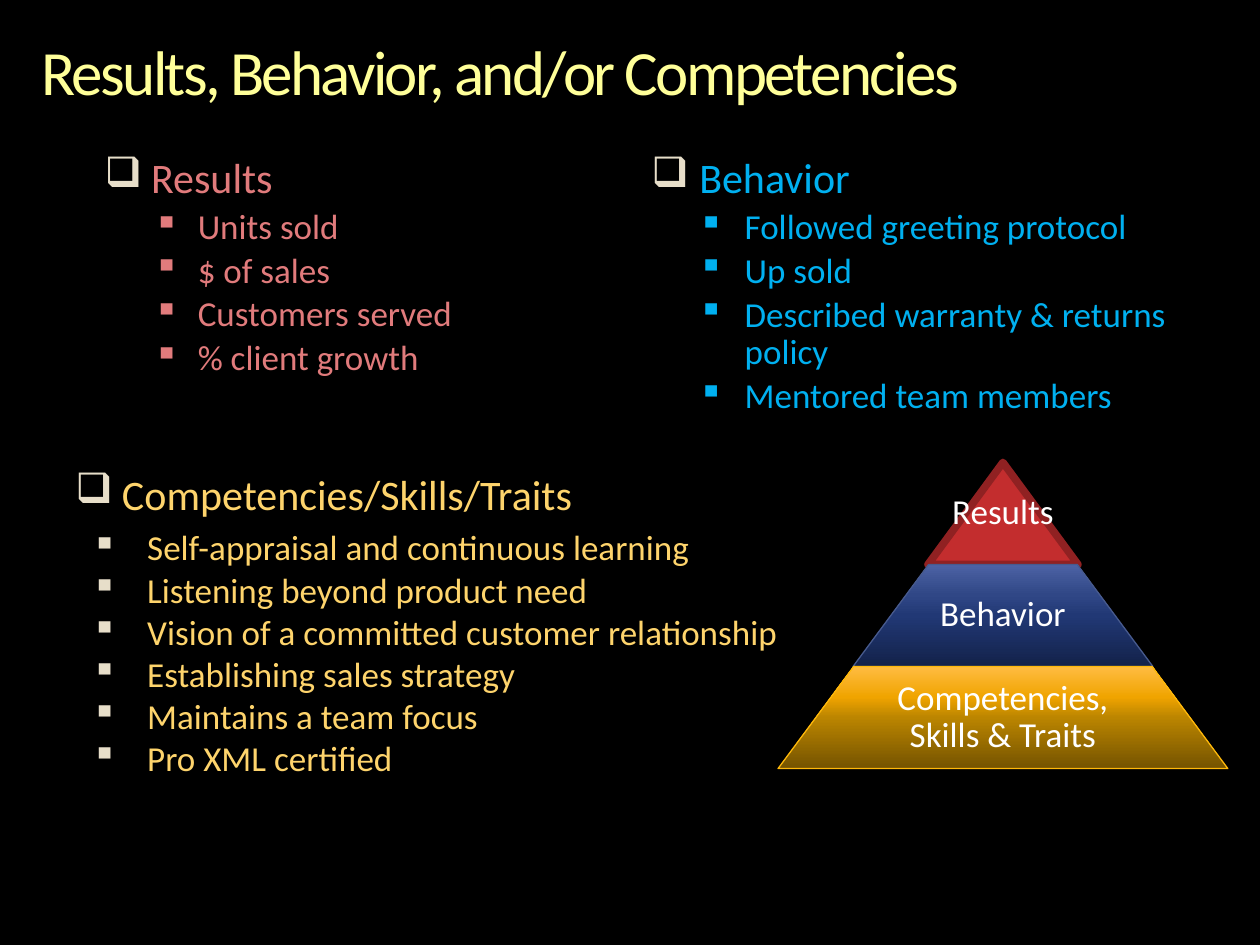
"""Build the slide on results, behavior and competencies with its pyramid."""
from dataclasses import dataclass

from lxml import etree
from pptx import Presentation
from pptx.dml.color import RGBColor
from pptx.enum import shapes, text
from pptx.oxml import ns
from pptx.util import Inches, Pt

COLORS = {
    "background": "000000", "title": "FFFF99", "marker": "E7DEC9", "label": "FFFFFF",
    "results": "E17B7C", "behavior": "00B0F0", "competencies": "FED46C",
}
FONT = "Calibri"
APEX_X, APEX_Y, TIER_WIDTH, TIER_HEIGHT, SLOPE = 7.96, 3.67, 1.19, 0.81, 0.741


@dataclass(frozen=True)
class Topic:
    heading: str
    items: tuple[str, ...]
    color: str
    box: tuple[float, float, float, float]
    margin: float
    hanging: float
    heading_margin: float = 0.37
    inset: tuple[float, float] = (0, 0)
    line_spacing: float = 0.9
    gap: float = 3.5
    first_gap: float = 3.5
    item_marker: str | None = None


@dataclass(frozen=True)
class Tier:
    label: str
    label_width: float
    stops: tuple[tuple[int, str], ...]
    outline: str
    outline_width: float


TOPICS = (
    Topic("Results", ("Units sold", "$ of sales", "Customers served", "% client growth"),
          "results", (0.83, 1.25, 4.17, 1.84), 0.74, 0.35),
    Topic("Behavior", ("Followed greeting protocol", "Up sold",
                       "Described warranty & returns policy", "Mentored team members"),
          "behavior", (5.17, 1.25, 4.17, 2.15), 0.74, 0.37, 0.38),
    Topic("Competencies/Skills/Traits",
          ("Self-appraisal and continuous learning", "Listening beyond product need",
           "Vision of a committed customer relationship", "Establishing sales strategy",
           "Maintains a team focus", "Pro XML certified"),
          "competencies", (0.5, 3.67, 5.83, 3.2), 0.57, 0.44,
          inset=(0.1, 0.05), line_spacing=1.0, gap=0, first_gap=4, item_marker="marker"),
)
TIERS = (
    Tier("Results", 1.19, ((0, "C32D2E"),), "902122", 4.33),
    Tier("Behavior", 1.55, ((0, "13224A"), (50, "213875"), (70, "304786"), (100, "4C62A4")),
         "475A8D", 0.75),
    Tier("Competencies, Skills & Traits", 2.33,
         ((0, "745300"), (50, "BB8500"), (70, "F0A400"), (100, "FFBC42")), "FEB80A", 0.75),
)


def rgb(name: str) -> RGBColor:
    """Look up a named colour."""
    return RGBColor.from_string(COLORS[name])


def add_box(slide, box, inset=(0, 0)):
    """Add a wrapping text box and return its text frame."""
    frame = slide.shapes.add_textbox(*map(Inches, box)).text_frame
    frame.word_wrap = True
    frame.margin_left = frame.margin_right = Inches(inset[0])
    frame.margin_top = frame.margin_bottom = Inches(inset[1])
    return frame


def add_run(paragraph, wording: str, size: float, color: str):
    """Add one styled run."""
    run = paragraph.add_run()
    run.text = wording
    run.font.size, run.font.name = Pt(size), FONT
    run.font.color.rgb = rgb(color)
    return run


def set_bullet(paragraph, symbol: str, color: str, margin: float, hanging: float) -> None:
    """Give a paragraph a hanging bullet."""
    properties = paragraph._p.get_or_add_pPr()
    properties.set("marL", str(Inches(margin)))
    properties.set("indent", str(-Inches(hanging)))
    tint = etree.SubElement(properties, ns.qn("a:buClr"))
    etree.SubElement(tint, ns.qn("a:srgbClr"), val=COLORS[color])
    etree.SubElement(properties, ns.qn("a:buChar"), char=symbol)


def draw_topic(slide, topic: Topic) -> None:
    """Draw a heading with its bulleted items."""
    frame = add_box(slide, topic.box, topic.inset)
    heading = frame.paragraphs[0]
    set_bullet(heading, "❑", "marker", topic.heading_margin, topic.heading_margin)
    heading.line_spacing = topic.line_spacing
    add_run(heading, topic.heading, 24, topic.color)
    for index, wording in enumerate(topic.items):
        item = frame.add_paragraph()
        item.level = 1
        set_bullet(item, "▪", topic.item_marker or topic.color, topic.margin, topic.hanging)
        item.line_spacing = topic.line_spacing
        item.space_before = Pt(topic.gap if index else topic.first_gap)
        add_run(item, wording, 20, topic.color)


def fill_tier(shape, stops: tuple[tuple[int, str], ...]) -> None:
    """Fill a tier with one colour or an upward gradient."""
    if len(stops) == 1:
        shape.fill.solid()
        shape.fill.fore_color.rgb = RGBColor.from_string(stops[0][1])
        return
    shape.fill.gradient()
    shape.fill.gradient_angle = 90
    stop_list = shape._element.spPr.find(".//" + ns.qn("a:gsLst"))
    for stop in list(stop_list):
        stop_list.remove(stop)
    for position, color in stops:
        stop = etree.SubElement(stop_list, ns.qn("a:gs"), pos=str(position * 1000))
        etree.SubElement(stop, ns.qn("a:srgbClr"), val=color)


def draw_tier(slide, tier: Tier, index: int) -> None:
    """Draw one pyramid tier and its label."""
    width = TIER_WIDTH * (index + 1)
    top = APEX_Y + TIER_HEIGHT * index
    shape = slide.shapes.add_shape(
        shapes.MSO_SHAPE.TRAPEZOID, Inches(APEX_X - width / 2), Inches(top),
        Inches(width), Inches(TIER_HEIGHT))
    shape.adjustments[0] = SLOPE
    fill_tier(shape, tier.stops)
    shape.line.color.rgb = RGBColor.from_string(tier.outline)
    shape.line.width = Pt(tier.outline_width)
    etree.SubElement(shape._element.spPr.find(ns.qn("a:ln")), ns.qn("a:round"))
    shape.shadow.inherit = False
    frame = add_box(slide, (APEX_X - tier.label_width / 2, top, tier.label_width, TIER_HEIGHT),
                    (0.03, 0.03))
    frame.vertical_anchor = text.MSO_ANCHOR.MIDDLE
    label = frame.paragraphs[0]
    label.alignment = text.PP_ALIGN.CENTER
    label.line_spacing = 0.9
    add_run(label, tier.label, 20, "label")


def main() -> None:
    """Build and save the slide."""
    deck = Presentation()
    deck.slide_width, deck.slide_height = Inches(10), Inches(7.5)
    slide = deck.slides.add_slide(deck.slide_layouts[6])
    slide.background.fill.solid()
    slide.background.fill.fore_color.rgb = rgb("background")
    title = add_box(slide, (0.33, 0.33, 9.33, 0.92)).paragraphs[0]
    title.line_spacing = 0.9
    title_run = add_run(title, "Results, Behavior, and/or Competencies", 36, "title")
    title_run._r.get_or_add_rPr().set("spc", "-150")
    for topic in TOPICS:
        draw_topic(slide, topic)
    for index, tier in enumerate(TIERS):
        draw_tier(slide, tier, index)
    deck.save("out.pptx")


if __name__ == "__main__":
    main()
